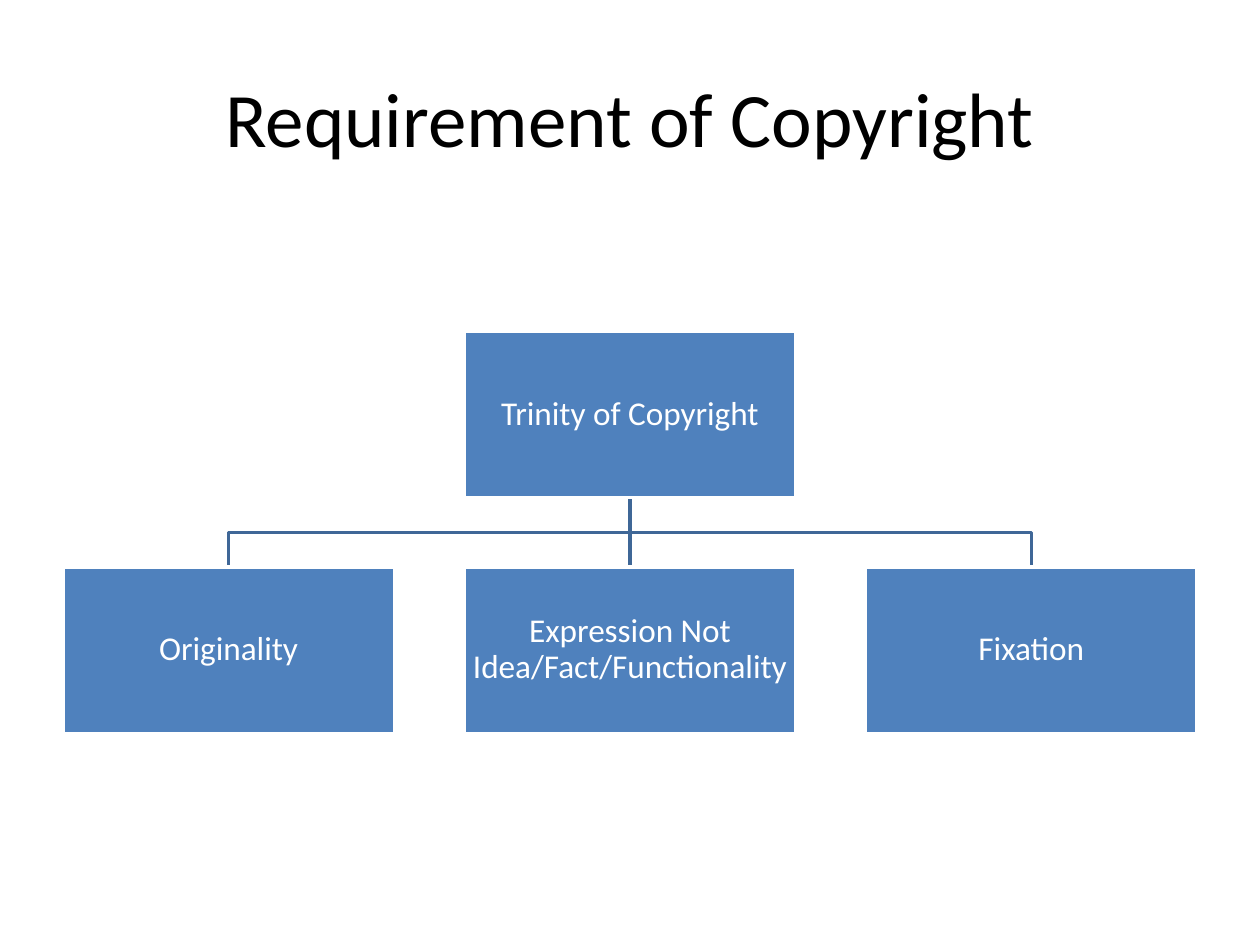
from dataclasses import dataclass

from lxml.etree import SubElement
from pptx import Presentation
from pptx.dml.color import RGBColor
from pptx.enum.shapes import MSO_CONNECTOR, MSO_SHAPE
from pptx.enum.text import MSO_ANCHOR, PP_ALIGN
from pptx.oxml.ns import qn
from pptx.util import Inches, Pt

TITLE = "Requirement of Copyright"
ROOT = "Trinity of Copyright"
CHILDREN = ["Originality", "Expression Not Idea/Fact/Functionality", "Fixation"]


@dataclass(frozen=True)
class Theme:
    font: str = "Calibri"
    title_size: int = 44
    box_size: int = 19
    line_width: int = 2
    black: RGBColor = RGBColor(0, 0, 0)
    white: RGBColor = RGBColor(255, 255, 255)
    blue: RGBColor = RGBColor(0x4F, 0x81, 0xBD)
    link: RGBColor = RGBColor(0x3F, 0x67, 0x97)


T = Theme()
SLIDE_W, SLIDE_H, MARGIN = 10, 7.5, 0.5
BOX_W, BOX_H = 2.63, 1.32
ROOT_TOP, CHILD_TOP = 2.63, 4.5
CENTER = SLIDE_W / 2
ROOT_BOTTOM = ROOT_TOP + BOX_H
MIDDLE = (ROOT_BOTTOM + CHILD_TOP) / 2
STEP = (SLIDE_W - 2 * MARGIN - BOX_W) / (len(CHILDREN) - 1)


def add_text(sp, text, size, color):
    tf = sp.text_frame
    tf.word_wrap = True
    tf.vertical_anchor = MSO_ANCHOR.MIDDLE
    p = tf.paragraphs[0]
    p.alignment = PP_ALIGN.CENTER
    r = p.add_run()
    r.text = text
    r.font.name = T.font
    r.font.size = Pt(size)
    r.font.color.rgb = color
    return tf


def style_line(sp, color):
    sp.line.color.rgb = color
    sp.line.width = Pt(T.line_width)


def add_box(s, text, x, y):
    sp = s.shapes.add_shape(
        MSO_SHAPE.RECTANGLE, Inches(x), Inches(y), Inches(BOX_W), Inches(BOX_H)
    )
    sp.shadow.inherit = False
    sp.fill.solid()
    sp.fill.fore_color.rgb = T.blue
    style_line(sp, T.white)
    tf = add_text(sp, text, T.box_size, T.white)
    tf.margin_left = tf.margin_right = Inches(0.01)
    tf.margin_top = tf.margin_bottom = Inches(0.01)
    tf.paragraphs[0].line_spacing = 0.9


def add_link(s, x):
    if abs(x - CENTER) < 0.01:
        sp = s.shapes.add_connector(
            MSO_CONNECTOR.STRAIGHT,
            Inches(CENTER), Inches(ROOT_BOTTOM), Inches(CENTER), Inches(CHILD_TOP),
        )
        SubElement(sp._element.spPr, qn("a:effectLst"))
    else:
        points = [(CENTER, MIDDLE), (x, MIDDLE), (x, CHILD_TOP)]
        fb = s.shapes.build_freeform(Inches(CENTER), Inches(ROOT_BOTTOM))
        fb.add_line_segments([(Inches(a), Inches(b)) for a, b in points], close=False)
        sp = fb.convert_to_shape()
        sp.shadow.inherit = False
        sp.fill.background()
    style_line(sp, T.link)


def main():
    prs = Presentation()
    prs.slide_width, prs.slide_height = Inches(SLIDE_W), Inches(SLIDE_H)
    s = prs.slides.add_slide(prs.slide_layouts[6])
    title = s.shapes.add_textbox(
        Inches(MARGIN), Inches(0.3), Inches(SLIDE_W - 2 * MARGIN), Inches(1.25)
    )
    add_text(title, TITLE, T.title_size, T.black)

    lefts = [MARGIN + i * STEP for i in range(len(CHILDREN))]
    for x in lefts:
        add_link(s, x + BOX_W / 2)
    add_box(s, ROOT, CENTER - BOX_W / 2, ROOT_TOP)
    for text, x in zip(CHILDREN, lefts):
        add_box(s, text, x, CHILD_TOP)
    prs.save("out.pptx")


if __name__ == "__main__":
    main()
